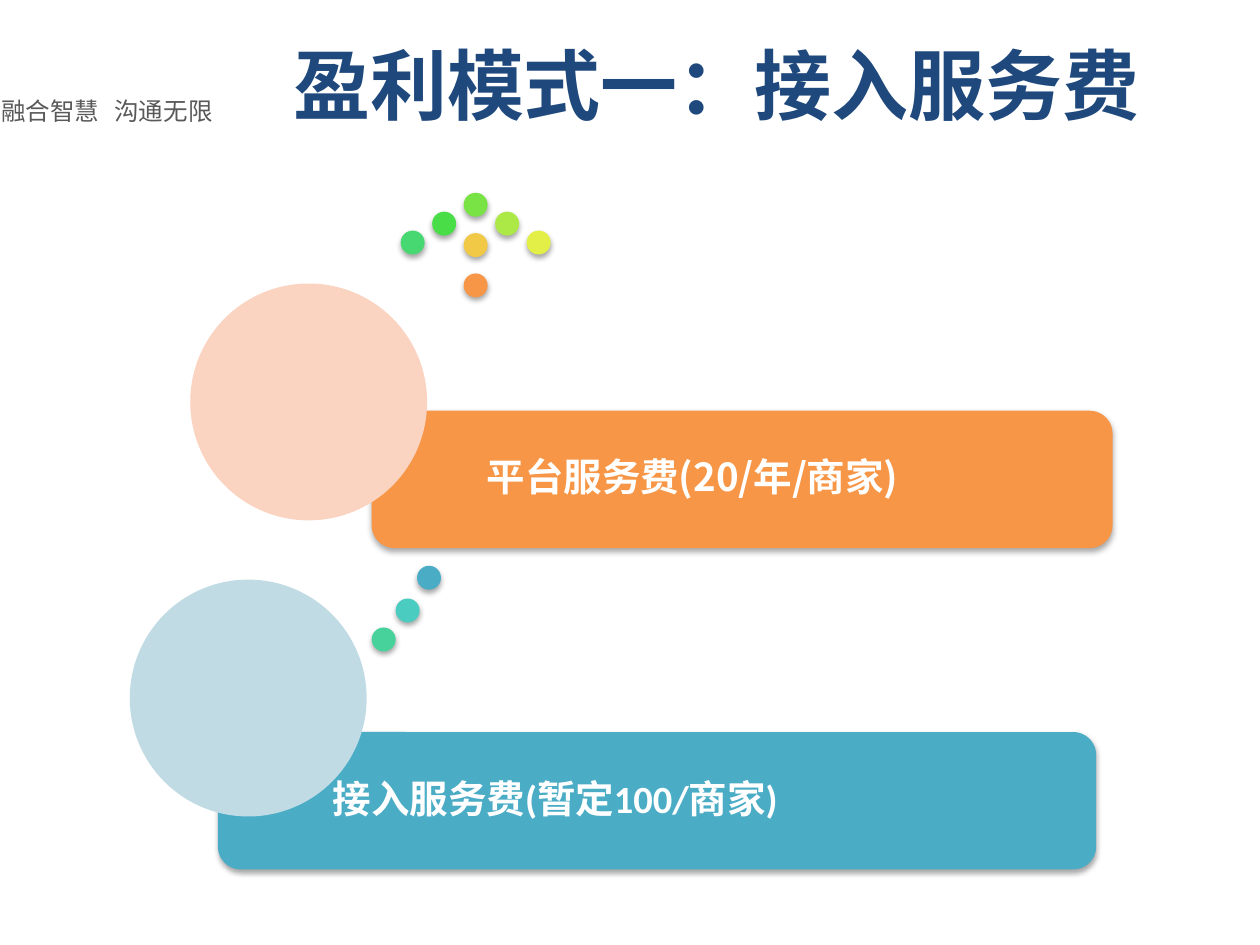
from lxml import etree
from pptx import Presentation
from pptx.dml.color import RGBColor
from pptx.enum.shapes import MSO_SHAPE
from pptx.enum.text import MSO_ANCHOR, PP_ALIGN
from pptx.oxml.ns import qn
from pptx.util import Inches, Pt

OVAL, ROUNDED = MSO_SHAPE.OVAL, MSO_SHAPE.ROUNDED_RECTANGLE
LEFT, CENTER = PP_ALIGN.LEFT, PP_ALIGN.CENTER
TOP, MIDDLE = MSO_ANCHOR.TOP, MSO_ANCHOR.MIDDLE

THEME = {
    "cjk": "Noto Sans CJK SC", "latin": "Calibri", "motto_font": "Noto Sans CJK JP",
    "motto": "595959", "title": "1F497D", "label": "FFFFFF", "shadow": "000000",
    "teal": "4BACC6", "pale_teal": "C1DBE5",
    "orange": "F79646", "pale_orange": "FBD3C1",
    "motto_size": 14, "title_size": 44, "label_size": 22,
}

MOTTO = "融合智慧\t沟通无限"
TITLE = "盈利模式一：接入服务费"
FEES = [
    {"runs": [("接入服务费(", "latin"), ("暂定", "cjk"), ("100/商家)", "latin")],
     "bar": (1.73, 5.81, 6.97), "disc": (1.03, 4.6),
     "fill": "teal", "disc_fill": "pale_teal"},
    {"runs": [("平台服务费(20/年/商家)", "cjk")],
     "bar": (2.95, 3.26, 5.88), "disc": (1.51, 2.25),
     "fill": "orange", "disc_fill": "pale_orange"},
]
TRAIL = [(3.31, 4.49, "4BACC6"), (3.14, 4.75, "4ACCC0"), (2.95, 4.98, "48D29B")]
ARROW_HEAD = ["47D872", "49DE47", "79E346", "ACE946", "E3EE46"]
ARROW_SHAFT = ["F2C946", "F79646"]

BAR_HEIGHT, DISC_SIZE, DOT_SIZE = 1.09, 1.88, 0.19
TIP_X, TIP_Y = 3.68, 1.53
HEAD_STEP_X, HEAD_STEP_Y, SHAFT_STEP = 0.25, 0.15, 0.32
LABEL_INDENT, LABEL_INSET = 0.86, 0.09
MOTTO_TAB = 0.9


def rgb(colour):
    return RGBColor.from_string(colour)


def add_shadow(shape):
    effects = shape._element.spPr.find(qn("a:effectLst"))
    shadow = etree.SubElement(effects, qn("a:outerShdw"), blurRad=str(Pt(3.1)),
                              dist=str(Pt(1.8)), dir="5400000", rotWithShape="0")
    colour = etree.SubElement(shadow, qn("a:srgbClr"), val=THEME["shadow"])
    etree.SubElement(colour, qn("a:alpha"), val="35000")


def add_solid(slide, kind, box, colour, shadowed=True):
    shape = slide.shapes.add_shape(kind, *map(Inches, box))
    shape.fill.solid()
    shape.fill.fore_color.rgb = rgb(colour)
    shape.line.fill.background()
    shape.shadow.inherit = False
    if shadowed:
        add_shadow(shape)
    return shape


def style(paragraph, size, colour, bold, align, family, latin=None):
    paragraph.alignment = align
    font = paragraph.font
    font.size, font.bold = Pt(size), bold
    font.color.rgb = rgb(colour)
    font.name = latin or family
    defaults = paragraph._p.pPr.find(qn("a:defRPr"))
    etree.SubElement(defaults, qn("a:ea"), typeface=family)


def add_text(slide, box, text, anchor, wrap):
    frame = slide.shapes.add_textbox(*map(Inches, box)).text_frame
    frame.word_wrap = wrap
    frame.vertical_anchor = anchor
    paragraph = frame.paragraphs[0]
    for index, part in enumerate(text.split("\t")):
        paragraph.add_run().text = part if index == 0 else "\t" + part
    return paragraph


def add_fee(slide, fee):
    bar = add_solid(slide, ROUNDED, (*fee["bar"], BAR_HEIGHT), THEME[fee["fill"]])
    frame = bar.text_frame
    frame.word_wrap = True
    frame.vertical_anchor = MIDDLE
    frame.margin_left = Inches(LABEL_INDENT)
    frame.margin_right = frame.margin_top = frame.margin_bottom = Inches(LABEL_INSET)
    label = frame.paragraphs[0]
    label.line_spacing = 0.9
    style(label, THEME["label_size"], THEME["label"], True, LEFT, THEME["cjk"])
    for text, family in fee["runs"]:
        run = label.add_run()
        run.text = text
        if len(fee["runs"]) > 1:
            run.font.name = THEME[family]
    add_solid(slide, OVAL, (*fee["disc"], DISC_SIZE, DISC_SIZE),
              THEME[fee["disc_fill"]], shadowed=False)


def arrow_dots():
    middle = len(ARROW_HEAD) // 2
    for index, colour in enumerate(ARROW_HEAD):
        offset = index - middle
        yield TIP_X + offset * HEAD_STEP_X, TIP_Y + abs(offset) * HEAD_STEP_Y, colour
    for index, colour in enumerate(ARROW_SHAFT, 1):
        yield TIP_X, TIP_Y + index * SHAFT_STEP, colour


def main():
    deck = Presentation()
    deck.slide_width, deck.slide_height = Inches(10), Inches(7.5)
    slide = deck.slides.add_slide(deck.slide_layouts[6])

    motto = add_text(slide, (-0.09, 0.71, 2.11, 0.34), MOTTO, TOP, False)
    tabs = etree.SubElement(motto._p.get_or_add_pPr(), qn("a:tabLst"))
    etree.SubElement(tabs, qn("a:tab"), pos=str(Inches(MOTTO_TAB)), algn="l")
    style(motto, THEME["motto_size"], THEME["motto"], False, LEFT, THEME["motto_font"])

    title = add_text(slide, (1.19, 0.33, 9, 1.25), TITLE, TOP, True)
    title.line_spacing = 0.9
    style(title, THEME["title_size"], THEME["title"], True, CENTER, THEME["cjk"])

    for x, y, colour in [*TRAIL, *arrow_dots()]:
        add_solid(slide, OVAL, (x, y, DOT_SIZE, DOT_SIZE), colour)
    for fee in FEES:
        add_fee(slide, fee)
    deck.save("out.pptx")


if __name__ == "__main__":
    main()
